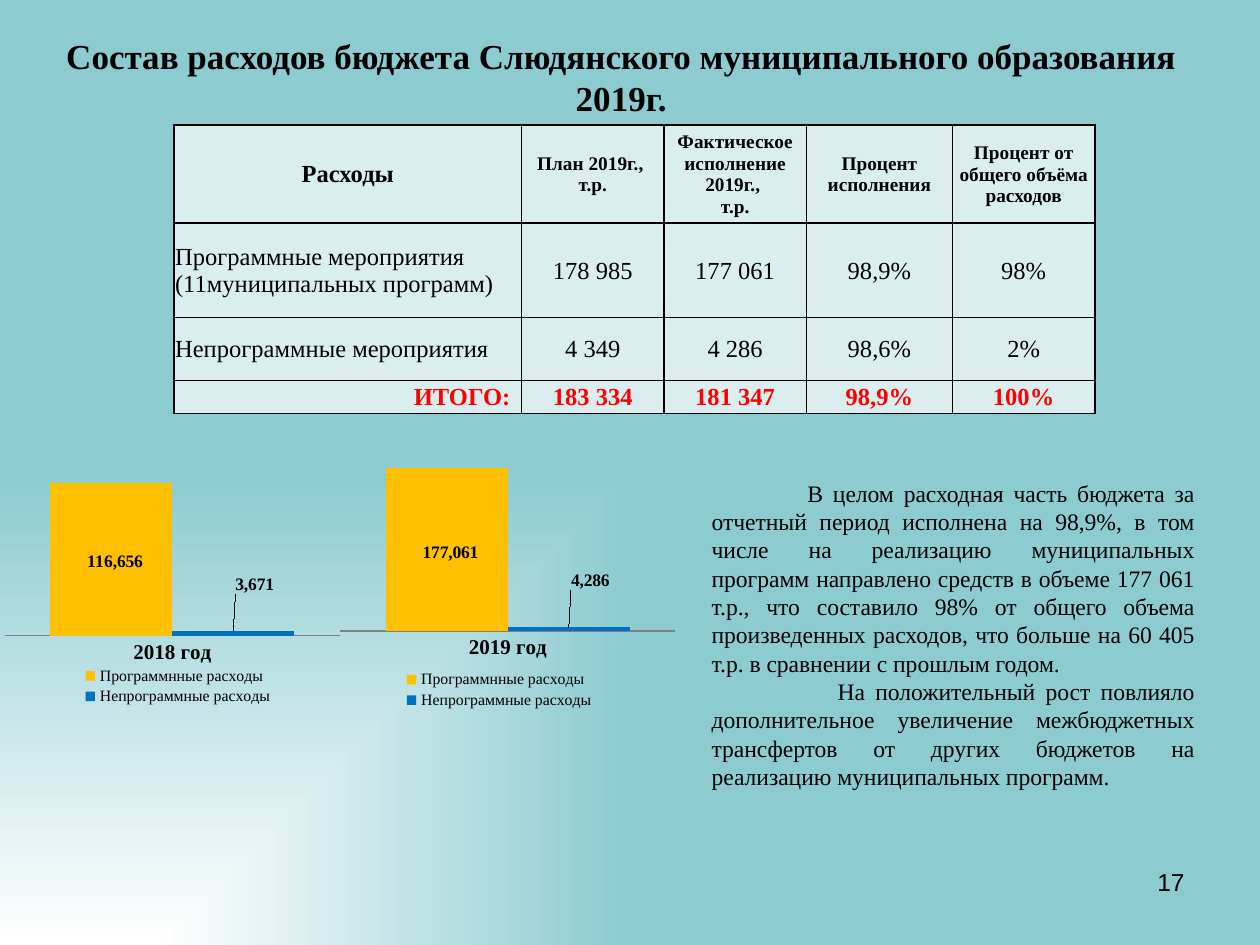
from lxml import etree
from pptx import Presentation
from pptx.chart.data import CategoryChartData
from pptx.dml.color import RGBColor
from pptx.enum import chart as charts, text
from pptx.oxml import parse_xml
from pptx.oxml.ns import nsdecls, qn
from pptx.util import Inches, Pt

BLACK = RGBColor(0x00, 0x00, 0x00)
RED = RGBColor(0xFF, 0x00, 0x00)
GREY = RGBColor(0x80, 0x80, 0x80)
PALE = RGBColor(0xDA, 0xED, 0xEF)
GOLD = RGBColor(0xFF, 0xC0, 0x00)
BLUE = RGBColor(0x00, 0x70, 0xC0)
SERIF = "Times New Roman"
ALIGN = text.PP_ALIGN


def set_font(font, size, bold=False, color=BLACK, name=SERIF):
    font.name, font.size, font.bold = name, Pt(size), bold
    font.color.rgb = color


def manual_layout(x, y, w=None, h=None, inner=False):
    """Chart layout in fractions; without a size, x and y are offsets."""
    parts = '<c:layoutTarget val="inner"/>' if inner else ""
    if w:
        parts += '<c:xMode val="edge"/><c:yMode val="edge"/>'
    for tag, value in zip("xywh", (x, y, w, h)):
        if value is not None:
            parts += f'<c:{tag} val="{value}"/>'
    return parse_xml(f'<c:layout {nsdecls("c")}><c:manualLayout>{parts}'
                     '</c:manualLayout></c:layout>')


presentation = Presentation()
presentation.slide_width, presentation.slide_height = Inches(10), Inches(7.5)
slide = presentation.slides.add_slide(presentation.slide_layouts[5])

# Background: gradient spreading from the bottom left corner
slide.background.fill.solid()
background = slide.background.fill._xPr
background.replace(background.find(qn("a:solidFill")), parse_xml(
    f'<a:gradFill {nsdecls("a")} rotWithShape="1"><a:gsLst>'
    '<a:gs pos="0"><a:srgbClr val="FFFFFF"/></a:gs>'
    '<a:gs pos="100000"><a:srgbClr val="8CCBD0"/></a:gs></a:gsLst>'
    '<a:path path="rect"><a:fillToRect t="100000" r="100000"/></a:path>'
    '</a:gradFill>'))

# Title
title = slide.shapes.title
title.left, title.top = Inches(0.28), Inches(0.21)
title.width, title.height = Inches(9.3), Inches(0.79)
title.text_frame.text = "Состав расходов бюджета Слюдянского муниципального образования\v2019г."
title.text_frame.vertical_anchor = text.MSO_ANCHOR.MIDDLE
title.text_frame.auto_size = text.MSO_AUTO_SIZE.NONE
title.text_frame.paragraphs[0].alignment = ALIGN.CENTER
for run in title.text_frame.paragraphs[0].runs:
    set_font(run.font, 20, bold=True)

# Expenditure table
rows = [
    ["Расходы", "План 2019г., \nт.р.", "Фактическое исполнение 2019г., \nт.р.",
     "Процент исполнения", "Процент от общего объёма расходов"],
    ["Программные мероприятия\n(11муниципальных программ)",
     "178 985", "177 061", "98,9%", "98%"],
    ["Непрограммные мероприятия", "4 349", "4 286", "98,6%", "2%"],
    ["ИТОГО:", "183 334", "181 347", "98,9%", "100%"],
]
first_column = [ALIGN.CENTER, ALIGN.LEFT, ALIGN.LEFT, ALIGN.RIGHT]
table = slide.shapes.add_table(4, 5, Inches(1.38), Inches(0.99),
                               Inches(7.31), Inches(2.29)).table
for column, width in zip(table.columns, [2.76, 1.13, 1.13, 1.16, 1.13]):
    column.width = Inches(width)
for row, height in zip(table.rows, [0.78, 0.75, 0.5, 0.26]):
    row.height = Inches(height)
for r, row in enumerate(rows):
    for c, value in enumerate(row):
        cell = table.cell(r, c)
        cell.text_frame.text = value
        cell.vertical_anchor = text.MSO_ANCHOR.MIDDLE
        cell.margin_left = cell.margin_right = cell.margin_top = Inches(0.01)
        cell.margin_bottom = 0
        if r == 3 and c == 0:
            cell.margin_right = Inches(0.09)
        for paragraph in cell.text_frame.paragraphs:
            paragraph.alignment = ALIGN.CENTER if c else first_column[r]
            set_font(paragraph.runs[0].font, 11 if r == 0 and c else 14,
                     bold=r in (0, 3), color=RED if r == 3 else BLACK)
        properties = cell._tc.get_or_add_tcPr()
        for side in ("lnL", "lnR", "lnT", "lnB"):
            properties.append(parse_xml(
                f'<a:{side} {nsdecls("a")} w="12700"><a:solidFill>'
                f'<a:srgbClr val="000000"/></a:solidFill></a:{side}>'))
        cell.fill.solid()
        cell.fill.fore_color.rgb = PALE

# Column charts, one per year: left, top, plot left, plot top, values
for year, left, top, plot_x, plot_y, values in [
    ("2019 год", 2.56, 3.39, 0.05, 0.07, (177061, 4286)),
    ("2018 год", 0.01, 3.36, 0.01, 0.1, (116656, 3671)),
]:
    data = CategoryChartData(number_format="#,##0")
    data.categories = [year]
    data.add_series("Программнные расходы", [values[0]])
    data.add_series("Непрограммные расходы", [values[1]])
    chart = slide.shapes.add_chart(
        charts.XL_CHART_TYPE.COLUMN_CLUSTERED, Inches(left), Inches(top),
        Inches(2.83), Inches(2.28), data).chart
    chart.has_title = False
    set_font(chart.font, 9)

    plot_area = chart._chartSpace.chart.plotArea
    for old in plot_area.findall(qn("c:layout")):
        plot_area.remove(old)
    plot_area.insert(0, manual_layout(plot_x, plot_y, 0.94, 0.64, inner=True))

    axis = chart.category_axis
    axis.major_tick_mark = charts.XL_TICK_MARK.NONE
    axis.format.line.color.rgb = GREY
    set_font(axis.tick_labels.font, 12, bold=True)
    chart.value_axis.visible = False
    chart.value_axis.has_major_gridlines = False
    chart.value_axis.minimum_scale = 0

    chart.has_legend = True
    chart.legend.position = charts.XL_LEGEND_POSITION.BOTTOM
    chart.legend.include_in_layout = False
    set_font(chart.legend.font, 9)
    for old in chart.legend._element.findall(qn("c:layout")):
        chart.legend._element.remove(old)
    chart.legend._element.find(qn("c:legendPos")).addnext(
        manual_layout(0.22, 0.84, 0.55, 0.15))

    plot = chart.plots[0]
    plot.gap_width, plot.overlap, plot.vary_by_categories = 75, 0, False
    position = charts.XL_LABEL_POSITION
    for series, color, place, offset in zip(
            plot.series, (GOLD, BLUE), (position.CENTER, position.OUTSIDE_END),
            ((0.01, 0.01), (0.06, -0.11))):
        series.format.fill.solid()
        series.format.fill.fore_color.rgb = color
        label = series.points[0].data_label
        set_font(label.font, 10, bold=True)
        label.position = place
        label._dLbl.find(qn("c:idx")).addnext(manual_layout(*offset))

# Commentary
commentary = slide.shapes.add_textbox(Inches(5.55), Inches(3.75), Inches(4.03), Inches(2.51))
frame = commentary.text_frame
frame.word_wrap = True
frame.text = (
    "В целом расходная часть бюджета за отчетный период исполнена на 98,9%, "
    "в том числе на реализацию муниципальных программ направлено средств в объеме "
    "177 061 т.р., что составило 98% от общего объема произведенных расходов, "
    "что больше на 60 405 т.р. в сравнении с прошлым годом.\n"
    "На положительный рост повлияло дополнительное увеличение межбюджетных "
    "трансфертов от других бюджетов на реализацию муниципальных программ.")
for paragraph, indent in zip(frame.paragraphs, (0.76, 1)):
    paragraph.alignment = ALIGN.JUSTIFY
    paragraph._p.get_or_add_pPr().set("indent", str(Inches(indent)))
    set_font(paragraph.runs[0].font, 13.5)

# Slide number
number = slide.shapes.add_textbox(Inches(7.17), Inches(6.83), Inches(2.33), Inches(0.52))
number.text_frame.word_wrap = True
number.text_frame.text = "17"
number.text_frame.paragraphs[0].alignment = ALIGN.RIGHT
set_font(number.text_frame.paragraphs[0].runs[0].font, 14, name="Arial")

presentation.save("out.pptx")
